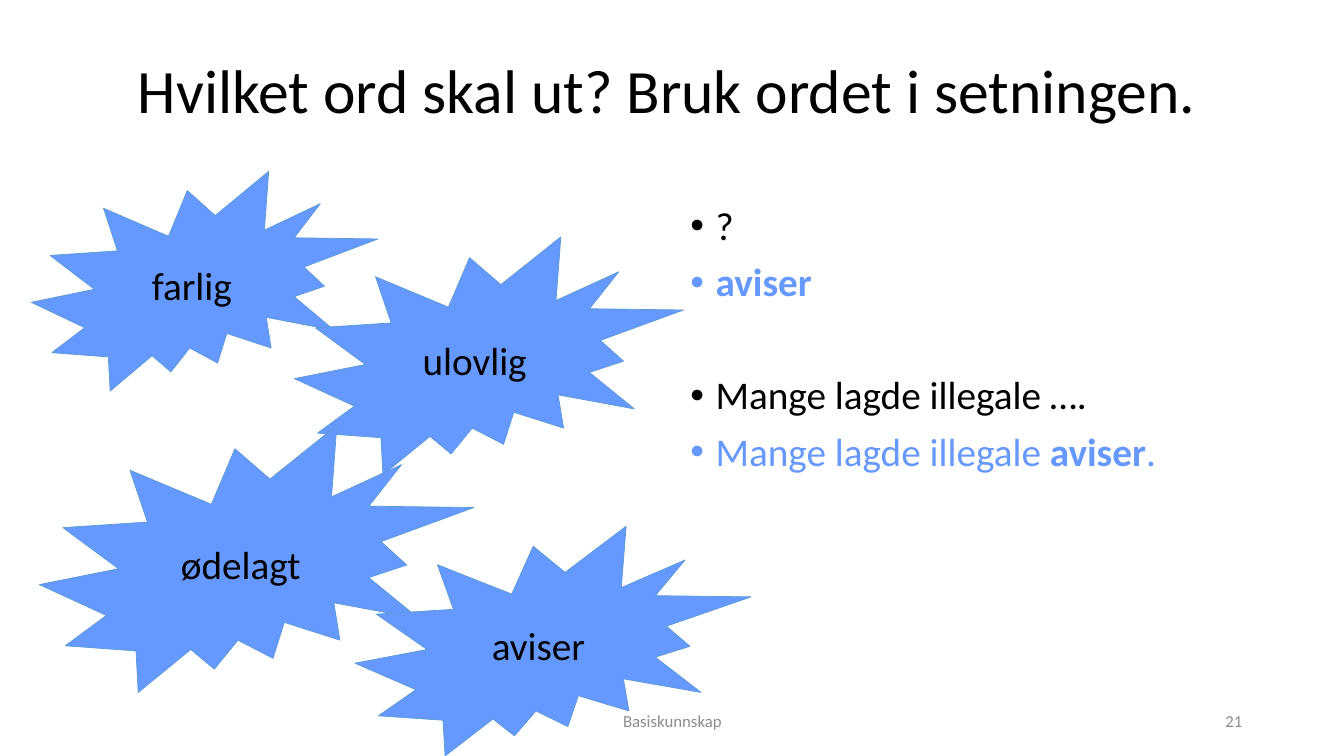
import pptx
import pptx.util
import pptx.dml.color
import pptx.enum.shapes
import pptx.enum.text
import lxml.etree

Inches = pptx.util.Inches
Pt = pptx.util.Pt
RGBColor = pptx.dml.color.RGBColor
Align = pptx.enum.text.PP_ALIGN
Anchor = pptx.enum.text.MSO_ANCHOR

BLACK = RGBColor(0x00, 0x00, 0x00)
BLUE = RGBColor(0x66, 0x99, 0xFF)
OUTLINE = RGBColor(0x5B, 0x9B, 0xD5)
GRAY = RGBColor(0x8C, 0x8C, 0x8C)

deck = pptx.Presentation()
deck.slide_width = Inches(13.33)
deck.slide_height = Inches(7.5)
page = deck.slides.add_slide(deck.slide_layouts[6])


def style_span(span, size, color, bold=False):
    span.font.name = "Calibri"
    span.font.size = Pt(size)
    span.font.color.rgb = color
    span.font.bold = bold


def add_label(box, text, size, color, align):
    frame = box.text_frame
    frame.word_wrap = True
    frame.vertical_anchor = Anchor.MIDDLE
    frame.text = text
    para = frame.paragraphs[0]
    para.alignment = align
    style_span(para.runs[0], size, color)
    return para


title = page.shapes.add_textbox(Inches(1.27), Inches(0.2), Inches(11.5), Inches(1.45))
add_label(title, "Hvilket ord skal ut? Bruk ordet i setningen.", 44, BLACK, Align.LEFT).line_spacing = 0.9

answers = [
    (BLACK, 10, [("?", False)]),
    (BLUE, 10, [("aviser", True)]),
    (BLACK, 50.5, [("Mange lagde illegale ….", False)]),
    (BLUE, 10, [("Mange lagde illegale ", False), ("aviser", True), (".", False)]),
]
body = page.shapes.add_textbox(Inches(6.75), Inches(2), Inches(5.67), Inches(4.76))
frame = body.text_frame
frame.word_wrap = True
for index, (color, space, spans) in enumerate(answers):
    para = frame.paragraphs[0] if index == 0 else frame.add_paragraph()
    para.line_spacing = 0.9
    para.space_before = Pt(space)
    for text, bold in spans:
        span = para.add_run()
        span.text = text
        style_span(span, 28, color, bold)
    properties = para._p.get_or_add_pPr()
    properties.set("marL", str(Inches(0.25)))
    properties.set("indent", str(-Inches(0.25)))
    for tag, name, value in [("buFont", "typeface", "Arial"), ("buChar", "char", "•")]:
        lxml.etree.SubElement(properties, pptx.oxml.ns.qn("a:" + tag)).set(name, value)

bursts = [
    ("farlig", 0.31, 1.7, 3.44, 2.18),
    ("ulovlig", 2.92, 2.35, 3.86, 2.36),
    ("ødelagt", 0.39, 4.22, 4.31, 2.65),
    ("aviser", 3.52, 5.22, 3.93, 2.28),
]
for word, *place in bursts:
    burst = page.shapes.add_shape(
        pptx.enum.shapes.MSO_SHAPE.EXPLOSION2, *[Inches(length) for length in place])
    burst.shadow.inherit = False
    burst.fill.solid()
    burst.fill.fore_color.rgb = BLUE
    burst.line.color.rgb = OUTLINE
    burst.line.width = Pt(0.5)
    add_label(burst, word, 28, BLACK, Align.CENTER)

footers = [("Basiskunnskap", 4.42, 4.5, Align.CENTER), ("21", 9.42, 3, Align.RIGHT)]
for text, left, width, align in footers:
    footer = page.shapes.add_textbox(Inches(left), Inches(6.95), Inches(width), Inches(0.4))
    add_label(footer, text, 12, GRAY, align)

deck.save("out.pptx")
